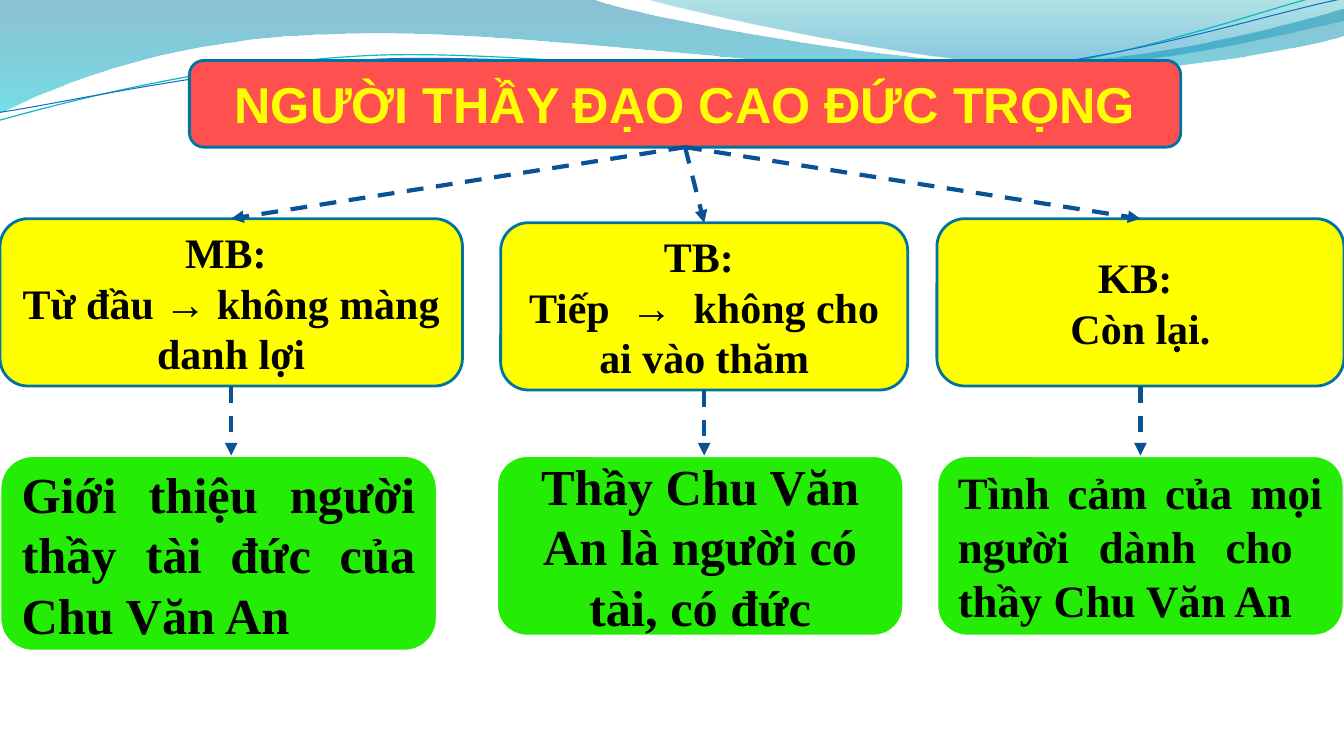
"""Build a slide that maps the three parts of a story about a teacher."""
from dataclasses import dataclass

from lxml import etree
from pptx import Presentation
from pptx import util as u
from pptx.dml.color import RGBColor
from pptx.enum import dml, shapes, text
from pptx.oxml.ns import qn

PX = 9144


@dataclass(frozen=True)
class Theme:
    red: str = "FF5050"
    yellow: str = "FFFF00"
    green: str = "25EC04"
    white: str = "FFFFFF"
    black: str = "000000"
    edge: str = "0074A1"
    arrow: str = "095295"
    aqua: str = "00C6CF"
    teal: str = "00A1A9"
    sky: str = "008BBF"
    cyan: str = "0AB8BF"
    blue: str = "0F6FC6"
    sans: str = "Arial"
    serif: str = "Times New Roman"
    large: int = 36
    mid: int = 32
    small: int = 30


T = Theme()


@dataclass(frozen=True)
class Box:
    x: int
    y: int
    w: int
    h: int
    lines: tuple
    fill: str
    edge: str = T.edge
    size: int = T.small
    color: str = T.black
    font: str = T.serif
    align: text.PP_ALIGN = text.PP_ALIGN.CENTER
    pad: int = 12


@dataclass(frozen=True)
class Wave:
    """A path whose steps hold one point for a line and three for a curve."""
    start: tuple
    steps: tuple
    stops: tuple = ()
    line: str = ""
    width: float = 0
    turn: float = 0


WAVES = (
    Wave((0, 0), (((587, -1),),
                  ((634, 17), (885, 63), (1011, 63)),
                  ((1138, 63), (1278, 26), (1334, 9)),
                  ((1335, 36),),
                  ((1311, 44), (1160, 76), (995, 75)),
                  ((829, 75), (509, 28), (343, 34)),
                  ((172, 36), (61, 83), (-1, 113))),
         stops=((0, T.edge, 45), (1, T.aqua, 55))),
    Wave((639, -1), (((679, 11), (909, 62), (1025, 65)),
                     ((1141, 69), (1282, 32), (1334, 21)),
                     ((1334, 0),)),
         stops=((0, T.teal, 30), (0.8, T.sky, 45))),
    Wave((-3, 88), (((63, 73), (211, 41), (369, 41)),
                    ((529, 42), (788, 93), (949, 89)),
                    ((1109, 87), (1254, 36), (1333, 22))),
         line=T.cyan, width=0.85, turn=357.3),
    Wave((-2, 80), (((62, 74), (218, 45), (378, 45)),
                    ((537, 47), (795, 88), (955, 86)),
                    ((1114, 83), (1256, 42), (1336, 30))),
         line=T.blue, width=0.75, turn=357.3),
)

TITLE = Box(188, 60, 984, 86, ("NGƯỜI THẦY ĐẠO CAO ĐỨC TRỌNG",), T.red,
            size=T.large, color=T.yellow, font=T.sans)
PARTS = (
    (Box(0, 217, 459, 166, ("MB: ", "Từ đầu → không màng danh lợi"), T.yellow, pad=10),
     Box(0, 452, 434, 194, ("Giới thiệu người thầy tài đức của Chu Văn An",),
         T.green, T.white, T.large, align=text.PP_ALIGN.JUSTIFY)),
    (Box(497, 221, 404, 166, ("TB: ", "Tiếp  →  không cho ai vào thăm"), T.yellow),
     Box(493, 452, 404, 179, ("Thầy Chu Văn An là người có tài, có đức",),
         T.green, T.white, T.large)),
    (Box(930, 217, 404, 166, ("KB: ", "Còn lại."), T.yellow),
     Box(930, 452, 404, 179, ("Tình cảm của mọi người dành cho  thầy Chu Văn An",),
         T.green, T.white, T.mid, align=text.PP_ALIGN.JUSTIFY)),
)


def rgb(code: str) -> RGBColor:
    """Turn a hex code into a colour."""
    return RGBColor.from_string(code)


def write(frame, lines: tuple, *, size: int, font: str, color: str, align) -> None:
    """Put bold lines of text in a frame."""
    for i, line in enumerate(lines):
        para = frame.paragraphs[0] if i == 0 else frame.add_paragraph()
        para.alignment = align
        run = para.add_run()
        run.text = line
        run.font.size, run.font.bold, run.font.name = u.Pt(size), True, font
        run.font.color.rgb = rgb(color)


def bend(shape, steps: tuple) -> None:
    """Turn each three-point step of an outline into one cubic curve."""
    lines = iter(list(shape.element.spPr.iter(qn("a:lnTo"))))
    for step in steps:
        group = [next(lines) for _ in step]
        if len(group) == 3:
            curve = etree.Element(qn("a:cubicBezTo"))
            group[0].addprevious(curve)
            for line in group:
                curve.append(line[0])
                line.getparent().remove(line)


def draw_wave(slide, wave: Wave) -> None:
    """Draw one curved band or line of the header."""
    pen = slide.shapes.build_freeform(*wave.start, scale=PX)
    points = [point for step in wave.steps for point in step]
    pen.add_line_segments(points, close=bool(wave.stops))
    shape = pen.convert_to_shape()
    bend(shape, wave.steps)
    shape.rotation = wave.turn
    shape.shadow.inherit = False
    if not wave.stops:
        shape.fill.background()
        shape.line.color.rgb = rgb(wave.line)
        shape.line.width = u.Pt(wave.width)
        return
    shape.line.fill.background()
    shape.fill.gradient()
    shape.fill.gradient_angle = 270
    for stop, (place, color, _) in zip(shape.fill.gradient_stops, wave.stops):
        stop.position, stop.color.rgb = place, rgb(color)
    tints = shape.element.spPr.iter(qn("a:srgbClr"))
    for tint, (_, _, alpha) in zip(tints, wave.stops):
        etree.SubElement(tint, qn("a:alpha")).set("val", str(alpha * 1000))


def draw_box(slide, box: Box):
    """Draw one rounded box with its text."""
    shape = slide.shapes.add_shape(
        shapes.MSO_SHAPE.FLOWCHART_ALTERNATE_PROCESS,
        *(n * PX for n in (box.x, box.y, box.w, box.h)))
    shape.shadow.inherit = False
    shape.fill.solid()
    shape.fill.fore_color.rgb = rgb(box.fill)
    shape.line.color.rgb = rgb(box.edge)
    shape.line.width = u.Pt(2)
    frame = shape.text_frame
    frame.word_wrap = True
    frame.vertical_anchor = text.MSO_ANCHOR.MIDDLE
    frame.margin_left = frame.margin_right = box.pad * PX
    frame.margin_top = frame.margin_bottom = box.pad * PX // 2
    write(frame, box.lines, size=box.size, font=box.font, color=box.color,
          align=box.align)
    return shape


def draw_arrow(slide, start, end, *, down: bool = False) -> None:
    """Join two boxes, straight down or to the middle of the lower one."""
    x, y = start.left + start.width // 2, start.top + start.height
    mid = end.left + end.width // 2
    line = slide.shapes.add_connector(
        shapes.MSO_CONNECTOR.STRAIGHT, x, y, x if down else mid, end.top)
    line.begin_connect(start, 2)
    if not down or x == mid:
        line.end_connect(end, 0)
    line.line.color.rgb = rgb(T.arrow)
    line.line.width = u.Pt(3)
    line.line.dash_style = dml.MSO_LINE.DASH
    props = line.element.spPr
    etree.SubElement(props.find(qn("a:ln")), qn("a:tailEnd")).set("type", "triangle")
    etree.SubElement(props, qn("a:effectLst"))


def main() -> None:
    """Build and save the slide."""
    deck = Presentation()
    deck.slide_width, deck.slide_height = 1334 * PX, 750 * PX
    slide = deck.slides.add_slide(deck.slide_layouts[6])
    for wave in WAVES:
        draw_wave(slide, wave)
    title = draw_box(slide, TITLE)
    for part, gist in PARTS:
        top, low = draw_box(slide, part), draw_box(slide, gist)
        draw_arrow(slide, title, top)
        draw_arrow(slide, top, low, down=True)
    deck.save("out.pptx")


if __name__ == "__main__":
    main()
